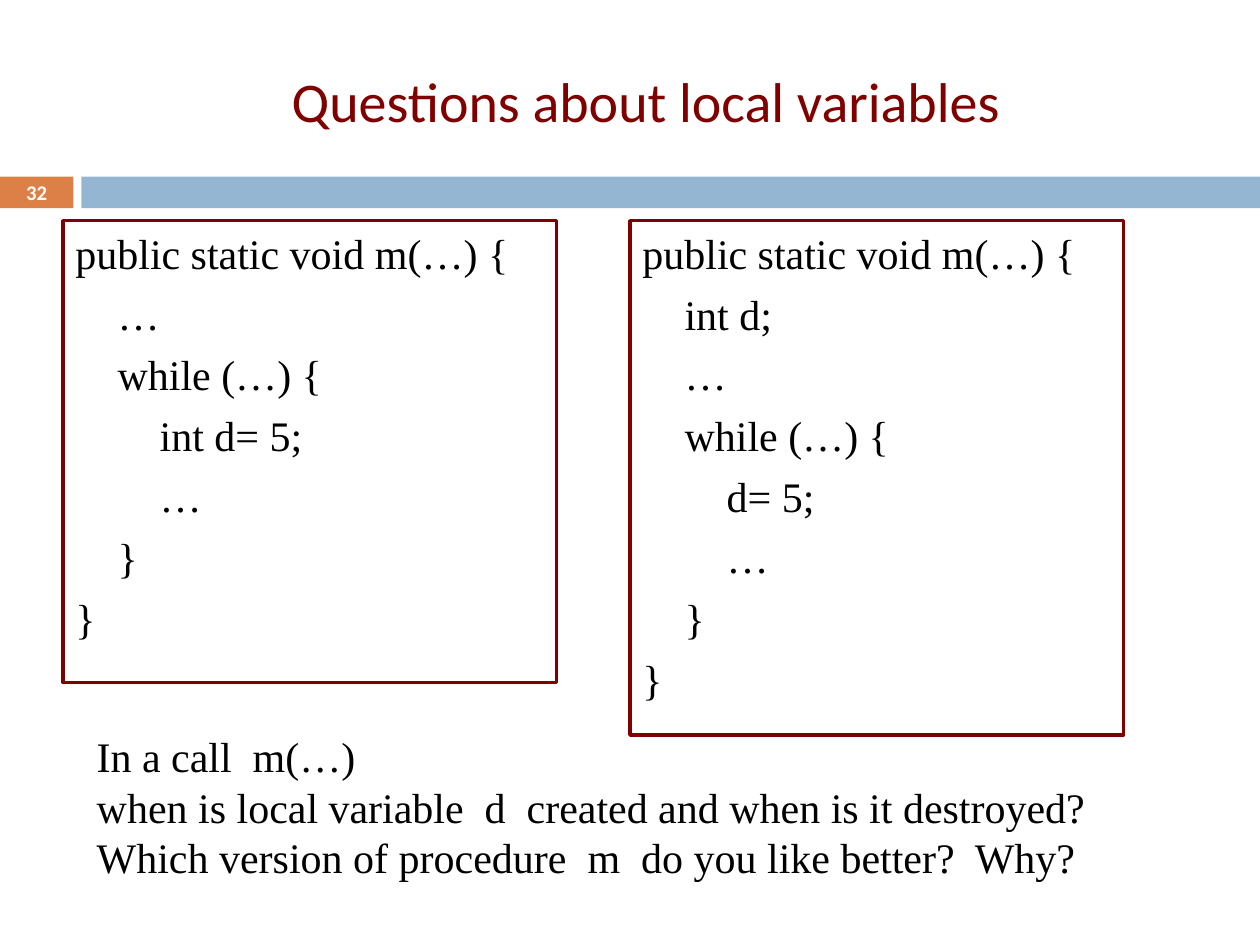
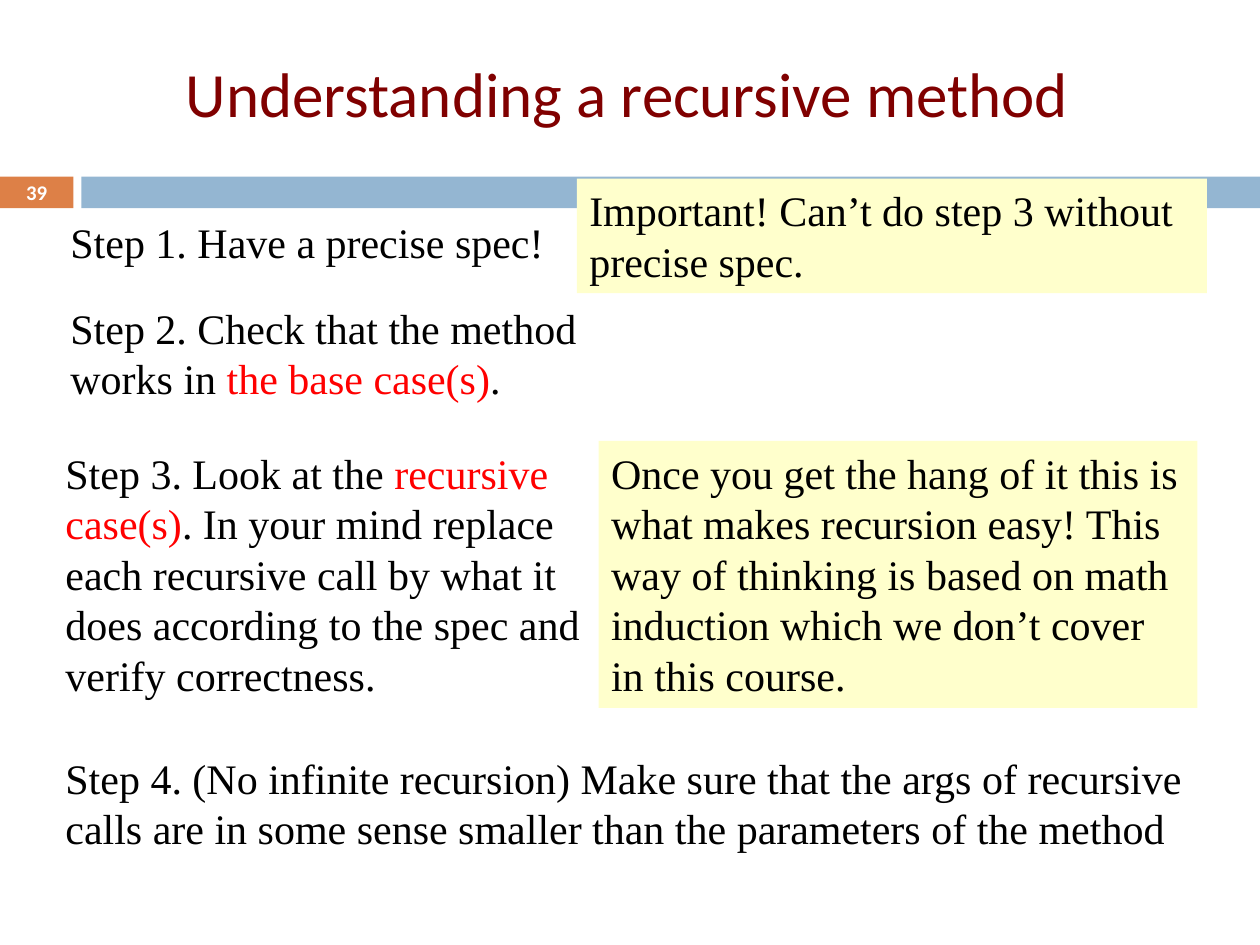
from dataclasses import dataclass
from typing import Optional

from pptx import Presentation
from pptx.dml.color import RGBColor as Rgb
from pptx.enum.shapes import MSO_SHAPE as Kind
from pptx.enum.text import MSO_ANCHOR as Anchor, PP_ALIGN as Align
from pptx.slide import Slide
from pptx.util import Cm, Pt


@dataclass(frozen=True)
class Theme:
    title: str = "800000"
    text: str = "000000"
    accent: str = "FF0000"
    badge: str = "DD8047"
    band: str = "94B6D2"
    note: str = "FFFFCC"
    light: str = "FFFFFF"
    head_font: str = "Calibri"
    body_font: str = "Times New Roman"
    body_size: float = 24
    badge_size: float = 11.9
    frame_width: float = 2


THEME = Theme()
WIDTH, HEIGHT = 25.4, 19.05
BAND_TOP, BAND_HIGH = 3.56, 0.64
BADGE_WIDE, BAND_LEFT = 1.48, 1.64
TAB = 0.85  # one level of code indent
STEP_LEFT, STEP_PAD = 1.07, 0.36


@dataclass(frozen=True)
class Area:
    left: float
    top: float
    width: float
    height: float


@dataclass(frozen=True)
class Style:
    font: str = THEME.body_font
    size: float = THEME.body_size
    color: str = THEME.text
    bold: bool = False
    align: Align = Align.LEFT
    anchor: Anchor = Anchor.TOP
    before: float = 0
    indent: float = 0
    pad_right: float = 0.25
    pad_edge: float = 0.13


@dataclass(frozen=True)
class Block:
    """Lines of text in an area; parts between bars are in the accent colour."""
    area: Area
    lines: tuple[str, ...]
    style: Style = Style()
    fill: Optional[str] = None
    frame: Optional[str] = None


@dataclass(frozen=True)
class Page:
    number: int
    title: Block
    blocks: tuple[Block, ...]


def put(target: object, values: dict[str, object]) -> None:
    for name, value in values.items():
        setattr(target, name, value)


def add_line(para, line: str, style: Style) -> None:
    """Fill a paragraph; leading tabs become its left indent."""
    text = line.lstrip("\t")
    indent = style.indent + TAB * (len(line) - len(text))
    put(para, {"alignment": style.align, "space_before": Pt(style.before)})
    props = para._p.get_or_add_pPr()
    props.set("marL", str(int(Cm(indent))))
    props.set("indent", "0")
    for pos, part in enumerate(text.split("|")):
        if not part:
            continue
        run = para.add_run()
        run.text = part
        put(run.font, {"name": style.font, "size": Pt(style.size),
                       "bold": style.bold})
        color = THEME.accent if pos % 2 else style.color
        run.font.color.rgb = Rgb.from_string(color)


def draw(slide: Slide, block: Block) -> None:
    area, style = block.area, block.style
    box = [Cm(n) for n in (area.left, area.top, area.width, area.height)]
    if block.fill or block.frame:
        shape = slide.shapes.add_shape(Kind.RECTANGLE, *box)
        shape.shadow.inherit = False
        if block.fill:
            shape.fill.solid()
            shape.fill.fore_color.rgb = Rgb.from_string(block.fill)
        else:
            shape.fill.background()
        if block.frame:
            shape.line.color.rgb = Rgb.from_string(block.frame)
            shape.line.width = Pt(THEME.frame_width)
        else:
            shape.line.fill.background()
    else:
        shape = slide.shapes.add_textbox(*box)
    frame = shape.text_frame
    put(frame, {"word_wrap": True, "vertical_anchor": style.anchor,
                "margin_left": Cm(0.25), "margin_right": Cm(style.pad_right),
                "margin_top": Cm(style.pad_edge),
                "margin_bottom": Cm(style.pad_edge)})
    for pos, line in enumerate(block.lines):
        para = frame.add_paragraph() if pos else frame.paragraphs[0]
        add_line(para, line, style)


def title(text: str, area: Area, size: float, pad: float = 0.25) -> Block:
    style = Style(THEME.head_font, size, THEME.title, align=Align.CENTER,
                  anchor=Anchor.MIDDLE, pad_right=pad)
    return Block(area, (text,), style)


def code(left: float, height: float, *lines: str) -> Block:
    return Block(Area(left, 4.45, 9.95, height), lines, Style(before=6),
                 frame=THEME.title)


def step(top: float, width: float, height: float, *lines: str,
         before: float = 0, indent: float = 0) -> Block:
    style = Style(before=before, indent=indent, pad_right=STEP_PAD)
    return Block(Area(STEP_LEFT, top, width, height), lines, style)


def note(area: Area, text: str) -> Block:
    return Block(area, (text,), fill=THEME.note)


def add_page(deck, page: Page) -> None:
    slide = deck.slides.add_slide(deck.slide_layouts[6])
    badge = Style(THEME.head_font, THEME.badge_size, THEME.light, True,
                  Align.CENTER, Anchor.MIDDLE, pad_edge=0)
    draw(slide, Block(Area(0, BAND_TOP, BADGE_WIDE, BAND_HIGH),
                      (str(page.number),), badge, THEME.badge))
    draw(slide, Block(Area(BAND_LEFT, BAND_TOP, WIDTH - BAND_LEFT, BAND_HIGH),
                      (), fill=THEME.band))
    for block in (page.title, *page.blocks):
        draw(slide, block)


PAGES = (
    Page(32, title("Questions about local variables",
                   Area(1.7, 0.64, 22.65, 2.74), 32), (
        code(1.27, 9.31,
             "public static void m(…) {", "\t…", "\twhile (…) {",
             "\t\tint d= 5;", "\t\t…", "\t}", "}"),
        Block(Area(1.7, 14.6, 21.17, 3.33), (
            "In a call  m(…)",
            "when is local variable  d  created and when is it destroyed?",
            "Which version of procedure  m  do you like better?  Why?")),
        code(12.7, 10.37,
             "public static void m(…) {", "\tint d;", "\t…", "\twhile (…) {",
             "\t\td= 5;", "\t\t…", "\t}", "}"),
    )),
    Page(39, title("Understanding a recursive method",
                   Area(1.9, 0.64, 21.6, 2.46), 36, STEP_PAD), (
        step(4.24, 11.63, 1.7, "Step 1. Have a precise spec!",
             before=7, indent=0.1),
        step(5.97, 11, 2.69, "Step 2. Check that the method works in "
             "|the base case(s)|.", before=7, indent=0.1),
        step(8.89, 11.43, 5.92,
             "Step 3. Look at the| recursive|",
             "|case(s)|. In your mind replace",
             "each recursive call by what it",
             "does according to the spec and verify correctness."),
        step(15.04, 23.5, 2.97,
             "Step 4. (No infinite recursion) Make sure that the args of "
             "recursive calls are in some sense smaller than the parameters "
             "of the method"),
        note(Area(11.63, 3.6, 12.7, 2.31),
             "Important! Can’t do step 3 without precise spec."),
        note(Area(12.07, 8.89, 12.07, 5.38),
             "Once you get the hang of it this is what makes recursion easy! "
             "This way of thinking is based on math induction which we don’t "
             "cover in this course."),
    )),
)


def main() -> None:
    deck = Presentation()
    put(deck, {"slide_width": Cm(WIDTH), "slide_height": Cm(HEIGHT)})
    for page in PAGES:
        add_page(deck, page)
    deck.save("out.pptx")


if __name__ == "__main__":
    main()
